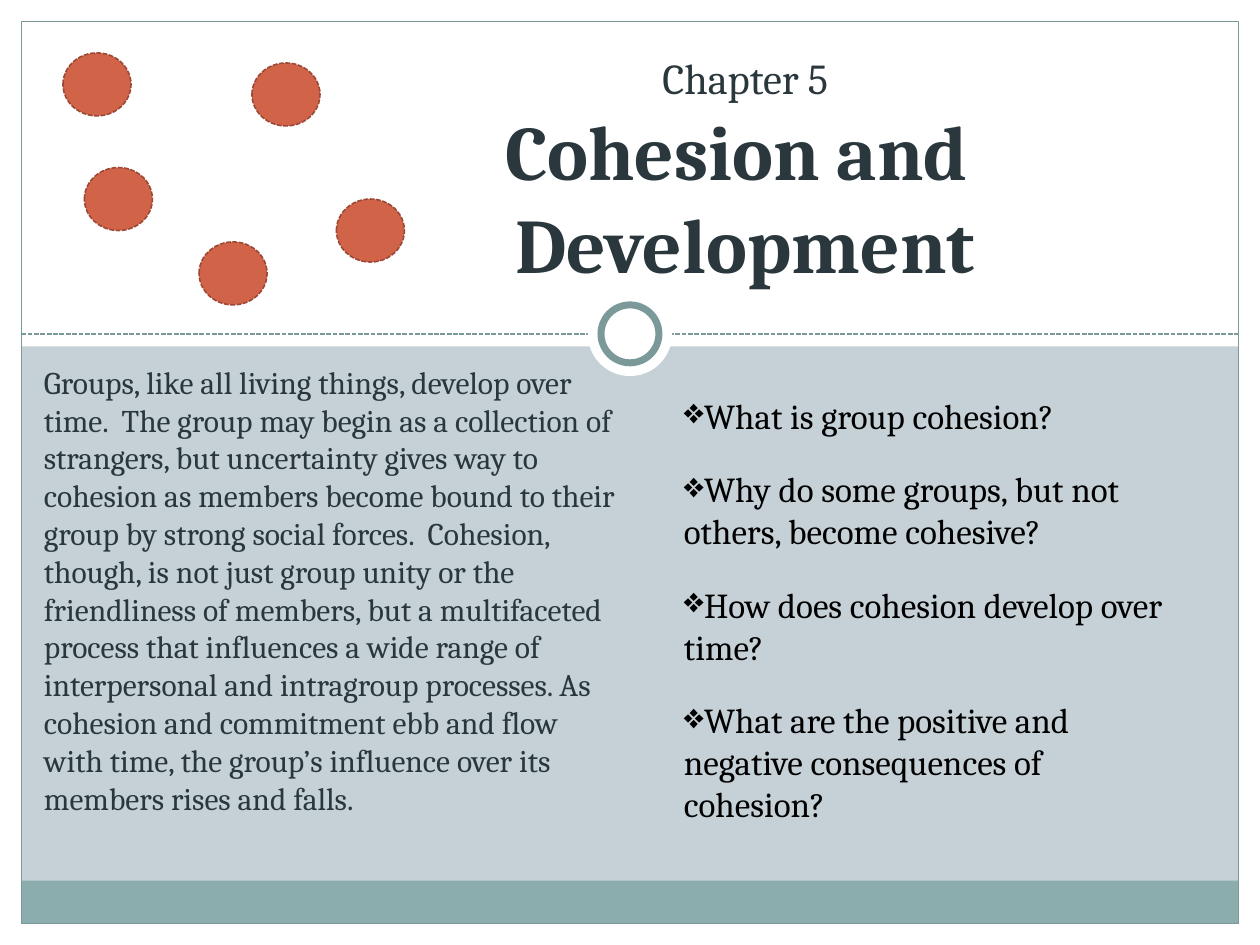
from pptx import Presentation
from pptx.util import Inches, Pt
from pptx.dml.color import RGBColor
from pptx.enum.dml import MSO_LINE
from pptx.enum.shapes import MSO_CONNECTOR, MSO_SHAPE
from pptx.enum.text import MSO_ANCHOR, PP_ALIGN
from lxml import etree

RECT, OVAL = MSO_SHAPE.RECTANGLE, MSO_SHAPE.OVAL
DASH = MSO_LINE.SQUARE_DOT
TOP, BOTTOM = MSO_ANCHOR.TOP, MSO_ANCHOR.BOTTOM
LEFT, CENTER = PP_ALIGN.LEFT, PP_ALIGN.CENTER

TITLE = "Chapter 5\vCohesion and \vDevelopment"
INTRO = (
    "Groups, like all living things, develop over time.  The group may begin as a "
    "collection of strangers, but uncertainty gives way to cohesion as members become "
    "bound to their group by strong social forces.  Cohesion, though, is not just group "
    "unity or the friendliness of members, but a multifaceted process that influences a "
    "wide range of interpersonal and intragroup processes. As cohesion and commitment ebb "
    "and flow with time, the group’s influence over its members rises and falls."
)
QUESTIONS = [
    "What is group cohesion?",
    "Why do some groups, but not others, become cohesive?",
    "How does cohesion develop over time?",
    "What are the positive and negative consequences of cohesion?",
]
DOTS = [(0.5, 0.42), (0.67, 1.33), (2.67, 1.58), (2, 0.5), (1.58, 1.92)]

THEME = {
    "font": "Cambria", "bg": "C5D1D7", "white": "FFFFFF", "band": "8CADAE",
    "rule": "7C999A", "ink": "2A373D", "black": "000000",
    "dot": "D16349", "dot_edge": "9B4936",
    "chapter": 24.3, "title": 44.1, "intro": 18, "question": 20, "gap": 18,
}
W, H, M = 10, 7.5, 0.17
HEADER_H, RULE_Y, BAND_H = 2.75, 2.65, 0.34


def rgb(name):
    return RGBColor.from_string(THEME[name])


def style_line(line, color, width, dash=None):
    line.color.rgb = rgb(color)
    line.width = Pt(width)
    if dash is not None:
        line.dash_style = dash


def add_box(slide, kind, x, y, w, h, fill=None, line=None):
    sp = slide.shapes.add_shape(kind, *map(Inches, (x, y, w, h)))
    sp.shadow.inherit = False
    if fill:
        sp.fill.solid()
        sp.fill.fore_color.rgb = rgb(fill)
    else:
        sp.fill.background()
    if line:
        style_line(sp.line, *line)
    else:
        sp.line.fill.background()


def add_ring(slide, size, line=None):
    add_box(slide, OVAL, (W - size) / 2, RULE_Y - size / 2, size, size, "white", line)


def add_text(slide, box, text, size, color, align=LEFT, anchor=TOP):
    tf = slide.shapes.add_textbox(*map(Inches, box)).text_frame
    tf.word_wrap = True
    tf.vertical_anchor = anchor
    tf.text = text
    for p in tf.paragraphs:
        p.alignment = align
        for r in p.runs:
            r.font.name = THEME["font"]
            r.font.size = Pt(THEME[size])
            r.font.color.rgb = rgb(color)
    return tf


def add_bullet(p, char):
    pPr = p._p.get_or_add_pPr()
    ns = pPr.nsmap["a"]
    etree.SubElement(pPr, f"{{{ns}}}buChar", char=char)


def add_rule(slide):
    ln = slide.shapes.add_connector(
        MSO_CONNECTOR.STRAIGHT, *map(Inches, (M, RULE_Y, W - M, RULE_Y)))
    style_line(ln.line, "rule", 0.9, DASH)
    spPr = ln._element.spPr
    etree.SubElement(spPr, f"{{{spPr.nsmap['a']}}}effectLst")


def add_frame(slide):
    for box in [(0, H - M, W, M), (W - M, 0, M, H), (0, 0, M, H), (0, 0, W, HEADER_H)]:
        add_box(slide, RECT, *box, "white")
    add_box(slide, RECT, M, H - M - BAND_H, W - 2 * M, BAND_H, "band")
    add_rule(slide)
    add_box(slide, RECT, M, M, W - 2 * M, H - 2 * M, line=("rule", 0.75))
    add_ring(slide, 0.67)
    add_ring(slide, 0.46, ("rule", 4))


def main():
    prs = Presentation()
    prs.slide_width, prs.slide_height = Inches(W), Inches(H)
    s = prs.slides.add_slide(prs.slide_layouts[6])
    s.background.fill.solid()
    s.background.fill.fore_color.rgb = rgb("bg")
    add_frame(s)

    tf = add_text(s, (2.25, 0.42, 7.33, 1.92), TITLE, "chapter", "ink", CENTER, BOTTOM)
    for r in tf.paragraphs[0].runs[1:]:
        r.font.size = Pt(THEME["title"])
        r.font.bold = True

    add_text(s, (0.25, 2.83, 4.75, 4.04), INTRO, "intro", "ink")
    tf = add_text(s, (5.33, 3.08, 4, 3.55), "\n".join(QUESTIONS), "question", "black")
    for p in tf.paragraphs:
        p.space_after = Pt(THEME["gap"])
        add_bullet(p, "❖")

    for x, y in DOTS:
        add_box(s, OVAL, x, y, 0.54, 0.5, "dot", ("dot_edge", 0.9, DASH))
    prs.save("out.pptx")


if __name__ == "__main__":
    main()
